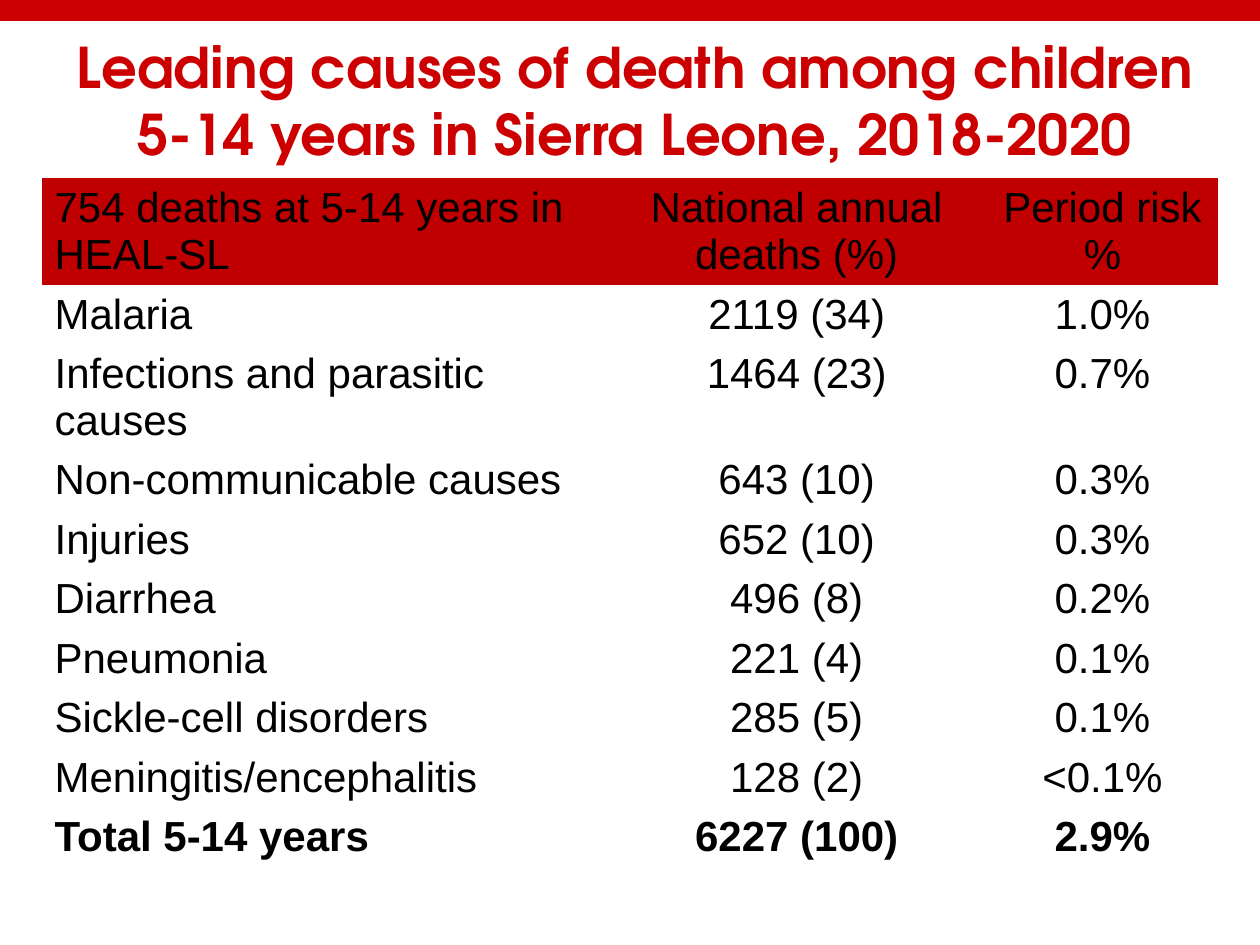
from pptx import Presentation
from pptx.dml.color import RGBColor
from pptx.enum import shapes, text
from pptx.oxml import ns
from pptx.util import Pt

RED = RGBColor(0xCC, 0x00, 0x00)
HEADER_RED = RGBColor(0xC0, 0x00, 0x00)
BLACK = RGBColor(0x00, 0x00, 0x00)
NO_STYLE_NO_GRID = "{2D5ABB26-0587-4C30-8999-92F81FD0307C}"

TITLE = "Leading causes of death among children 5-14 years in Sierra Leone, 2018-2020"
ROWS = [
    ("754 deaths at 5-14 years in HEAL-SL", "National annual deaths (%)", "Period risk %"),
    ("Malaria", "2119 (34)", "1.0%"),
    ("Infections and parasitic causes", "1464 (23)", "0.7%"),
    ("Non-communicable causes", "643 (10)", "0.3%"),
    ("Injuries", "652 (10)", "0.3%"),
    ("Diarrhea", "496 (8)", "0.2%"),
    ("Pneumonia", "221 (4)", "0.1%"),
    ("Sickle-cell disorders", "285 (5)", "0.1%"),
    ("Meningitis/encephalitis", "128 (2)", "<0.1%"),
    ("Total 5-14 years", "6227 (100)", "2.9%"),
]
COLUMN_WIDTHS = [322.5, 217.5, 132]
ROW_HEIGHT = 29.5
LEFT = 24


def add_run(paragraph, words, font_name, size, color, bold):
    run = paragraph.add_run()
    run.text = words
    run.font.name = font_name
    run.font.size = Pt(size)
    run.font.color.rgb = color
    run.font.bold = bold


presentation = Presentation()
presentation.slide_width = Pt(720)
presentation.slide_height = Pt(540)
slide = presentation.slides.add_slide(presentation.slide_layouts[5])

# Red band along the top edge
band = slide.shapes.add_shape(shapes.MSO_SHAPE.RECTANGLE, 0, 0, Pt(720), Pt(12))
band.shadow.inherit = False
band.fill.solid()
band.fill.fore_color.rgb = RED
band.line.fill.background()

# Title
title = slide.shapes.title
title.left, title.top, title.width, title.height = Pt(LEFT), Pt(12), Pt(678), Pt(90)
title.text_frame.word_wrap = True
title.text_frame.auto_size = text.MSO_AUTO_SIZE.NONE
title.text_frame.vertical_anchor = text.MSO_ANCHOR.MIDDLE
paragraph = title.text_frame.paragraphs[0]
paragraph.alignment = text.PP_ALIGN.CENTER
add_run(paragraph, TITLE, "TeX Gyre Adventor", 32, RED, True)

# Causes of death; rows grow to fit their text
table = slide.shapes.add_table(
    len(ROWS), len(COLUMN_WIDTHS), Pt(LEFT), Pt(102),
    Pt(sum(COLUMN_WIDTHS)), Pt(ROW_HEIGHT * len(ROWS))).table
table.first_row = False
table.horz_banding = False
table._tbl.tblPr.find(ns.qn("a:tableStyleId")).text = NO_STYLE_NO_GRID

for column, width in zip(table.columns, COLUMN_WIDTHS):
    column.width = Pt(width)

for row_index, values in enumerate(ROWS):
    table.rows[row_index].height = Pt(ROW_HEIGHT)
    is_total = row_index == len(ROWS) - 1
    for column_index, value in enumerate(values):
        cell = table.cell(row_index, column_index)
        if row_index == 0:
            cell.fill.solid()
            cell.fill.fore_color.rgb = HEADER_RED
        else:
            cell.fill.background()
        paragraph = cell.text_frame.paragraphs[0]
        paragraph.alignment = text.PP_ALIGN.CENTER if column_index else text.PP_ALIGN.LEFT
        add_run(paragraph, value, "Arial", 24, BLACK, is_total)

presentation.save("out.pptx")
